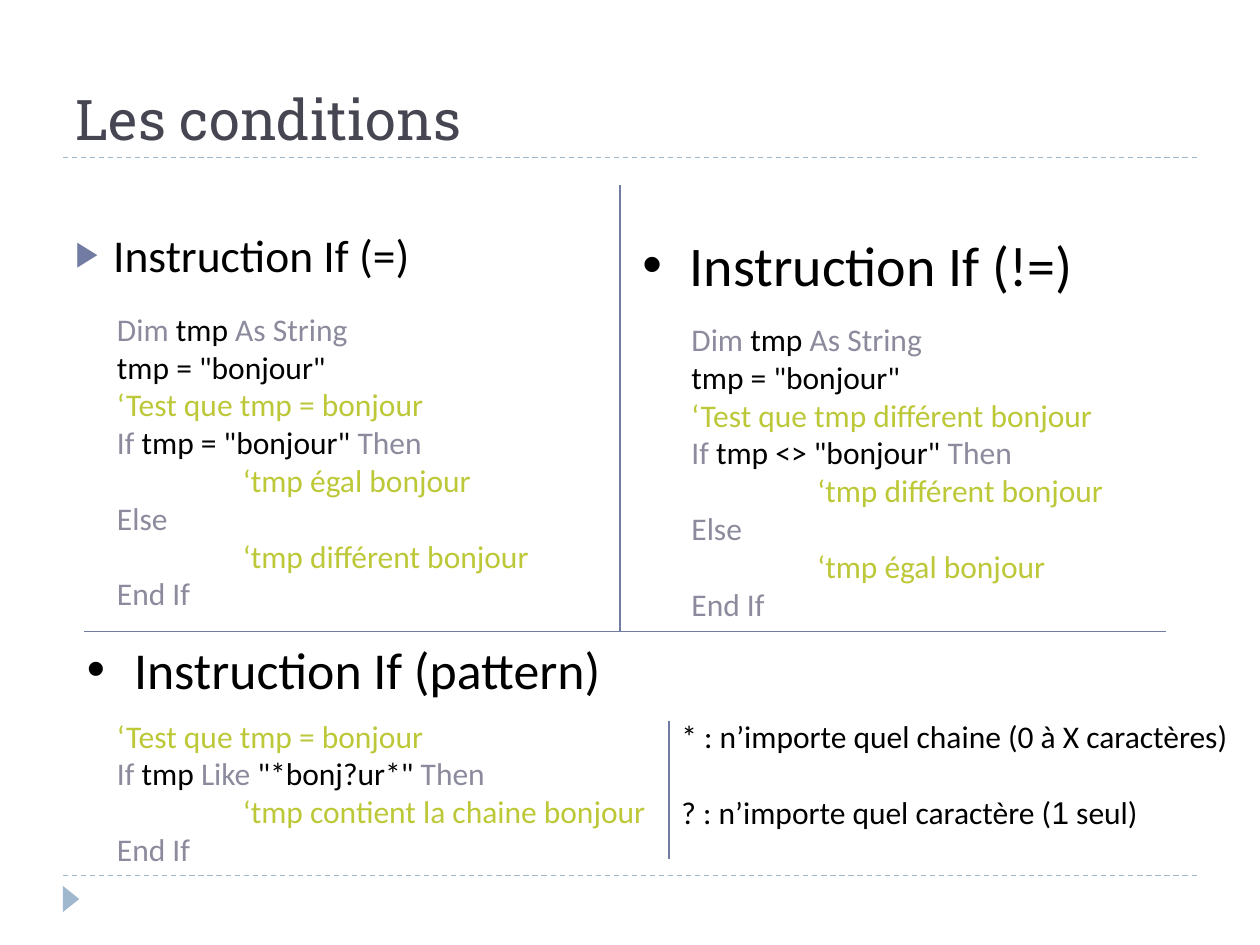
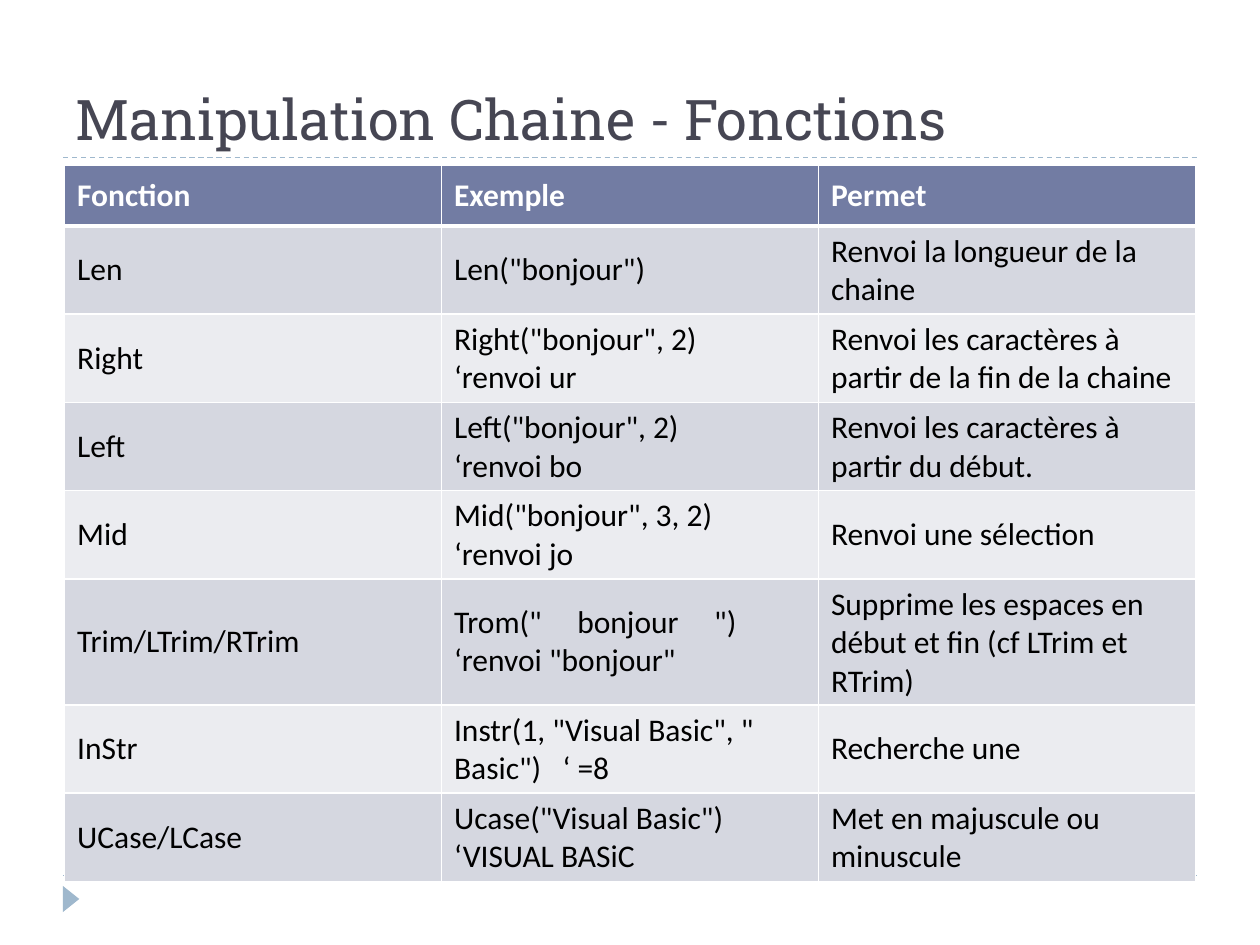
from dataclasses import dataclass
from typing import NamedTuple

from lxml import etree
from pptx import Presentation
from pptx.dml.color import RGBColor
from pptx.enum import dml, shapes, text
from pptx.oxml import ns
from pptx.util import Pt

INK = RGBColor(0x00, 0x00, 0x00)
WHITE = RGBColor(0xFF, 0xFF, 0xFF)
TITLE_GREY = RGBColor(0x46, 0x46, 0x53)
KEYWORD_GREY = RGBColor(0x8B, 0x8B, 0x9D)
COMMENT_GREEN = RGBColor(0xBC, 0xC8, 0x38)
ACCENT = RGBColor(0x72, 0x7C, 0xA3)
PALE_BLUE = RGBColor(0x9F, 0xB8, 0xCD)
BANDS = (RGBColor(0xD5, 0xD7, 0xE0), RGBColor(0xEB, 0xEC, 0xF0))

TITLE_FONT = "Roboto Slab"
BODY_FONT = "Calibri"
BULLET_FONT = "Arial"
BODY_SIZE = 18
MARGIN, CONTENT_WIDTH = 36, 648
TITLE_RULE_Y, FOOTER_RULE_Y = 90, 500.4
DIVIDER_X, DIVIDER_Y = 354.24, 360.72


class Box(NamedTuple):
    left: float
    top: float
    width: float
    height: float


class Run(NamedTuple):
    text: str
    color: RGBColor = INK
    font: str = BODY_FONT


@dataclass
class Line:
    runs: list[Run]
    indent: float = 0
    space_before: float = 0


@dataclass
class Heading:
    box: Box
    label: str
    size: float
    bullet: str = "•"
    bullet_color: RGBColor = INK
    bullet_percent: int = 100
    hang: float = 27


@dataclass
class Rule:
    x1: float
    y1: float
    x2: float
    y2: float
    color: RGBColor = ACCENT
    dashed: bool = False


def keyword(words: str) -> Run:
    return Run(words, KEYWORD_GREY)


def comment(words: str, indent: float = 0) -> Line:
    return Line([Run(words, COMMENT_GREEN)], indent)


def if_else(test: str, operator: str, when_true: str, when_false: str) -> list[Line]:
    """Code sample that compares tmp with "bonjour"."""
    return [
        Line([keyword("Dim "), Run("tmp "), keyword("As String")]),
        Line([Run('tmp = "bonjour"')]),
        comment(f"‘Test que tmp {test} bonjour"),
        Line([keyword("If "), Run(f'tmp {operator} "bonjour" '), keyword("Then")]),
        comment(f"‘tmp {when_true} bonjour", 72),
        Line([keyword("Else")]),
        comment(f"‘tmp {when_false} bonjour", 72),
        Line([keyword("End If")]),
    ]


HEADINGS = [
    Heading(Box(36, 126, 296, 47.5), "Instruction If (=)", 26, "▶", ACCENT, 76, 21.6),
    Heading(Box(360, 128, 326, 47.5), "Instruction If (!=)", 32),
    Heading(Box(42.5, 360.72, 323, 47.5), "Instruction If (pattern)", 29.6),
]

PATTERN_CODE = [
    comment("‘Test que tmp = bonjour"),
    Line([keyword("If "), Run("tmp "), keyword("Like "), Run('"*bonj?ur*" '), keyword("Then")]),
    comment("‘tmp contient la chaine bonjour", 72),
    Line([keyword("End If")]),
]

WILDCARDS = [
    Line([Run("* : n’importe quel chaine (0 à X caractères)")]),
    Line([Run("? : n’importe quel caractère ("), Run("1", font="Arial"), Run(" seul)")],
         space_before=22),
]

CODE_BLOCKS = [
    (Box(59.76, 173.5, 294.5, 181.5), if_else("=", "=", "égal", "différent")),
    (Box(388, 179.3, 294.5, 181.5), if_else("différent", "<>", "différent", "égal")),
    (Box(59.76, 406, 317.5, 94.5), PATTERN_CODE),
    (Box(382.3, 406, 337.7, 72.7), WILDCARDS),
]

DIVIDERS = [
    Rule(DIVIDER_X, 105.84, DIVIDER_X, DIVIDER_Y),
    Rule(48.24, DIVIDER_Y, 666, DIVIDER_Y),
    Rule(382.3, 411.84, 382.3, 491),
]

FUNCTIONS = [
    ("Fonction", "Exemple", "Permet"),
    ("Len", 'Len("bonjour")', "Renvoi la longueur de la chaine"),
    ("Right", 'Right("bonjour", 2)\n‘renvoi ur',
     "Renvoi les caractères à partir de la fin de la chaine"),
    ("Left", 'Left("bonjour", 2)\n‘renvoi bo', "Renvoi les caractères à partir du début."),
    ("Mid", 'Mid("bonjour", 3, 2)\n‘renvoi jo', "Renvoi une sélection"),
    ("Trim/LTrim/RTrim", 'Trom("     bonjour     ")\n‘renvoi "bonjour"',
     "Supprime les espaces en début et fin (cf LTrim et RTrim)"),
    ("InStr", 'Instr(1, "Visual Basic", " Basic")   ‘ =8', "Recherche une"),
    ("UCase/LCase", 'Ucase("Visual Basic") ‘VISUAL BASiC', "Met en majuscule ou minuscule"),
]
ROW_HEIGHTS = [34.5, 43.9, 43.9, 43.9, 43.9, 62.6, 43.9, 34.5]


def add_run(paragraph, run: Run, size: float, bold: bool = False) -> None:
    piece = paragraph.add_run()
    piece.text = run.text
    piece.font.name = run.font
    piece.font.size = Pt(size)
    piece.font.bold = bold
    piece.font.color.rgb = run.color


def add_frame(slide, box: Box):
    frame = slide.shapes.add_textbox(*map(Pt, box)).text_frame
    frame.word_wrap = True
    return frame


def next_paragraph(frame, index: int):
    return frame.add_paragraph() if index else frame.paragraphs[0]


def add_lines(slide, box: Box, lines: list[Line]) -> None:
    frame = add_frame(slide, box)
    for index, line in enumerate(lines):
        paragraph = next_paragraph(frame, index)
        paragraph.space_before = Pt(line.space_before)
        if line.indent:
            paragraph._p.get_or_add_pPr().set("marL", str(Pt(line.indent)))
        for run in line.runs:
            add_run(paragraph, run, BODY_SIZE)


def add_heading(slide, heading: Heading) -> None:
    paragraph = add_frame(slide, heading.box).paragraphs[0]
    paragraph.space_before = Pt(6)
    properties = paragraph._p.get_or_add_pPr()
    properties.set("marL", str(Pt(heading.hang)))
    properties.set("indent", str(-Pt(heading.hang)))
    color = etree.SubElement(properties, ns.qn("a:buClr"))
    etree.SubElement(color, ns.qn("a:srgbClr"), val=str(heading.bullet_color))
    etree.SubElement(properties, ns.qn("a:buSzPct"), val=str(heading.bullet_percent * 1000))
    etree.SubElement(properties, ns.qn("a:buFont"), typeface=BULLET_FONT)
    etree.SubElement(properties, ns.qn("a:buChar"), char=heading.bullet)
    add_run(paragraph, Run(heading.label), heading.size)


def add_rule(slide, rule: Rule) -> None:
    connector = slide.shapes.add_connector(
        shapes.MSO_CONNECTOR.STRAIGHT, Pt(rule.x1), Pt(rule.y1), Pt(rule.x2), Pt(rule.y2))
    connector.line.color.rgb = rule.color
    connector.line.width = Pt(0.75)
    if rule.dashed:
        connector.line.dash_style = dml.MSO_LINE.DASH
    etree.SubElement(connector._element.spPr, ns.qn("a:effectLst"))


def add_titled_slide(deck, title: str):
    """Blank slide with the shared rules, page marker and title."""
    slide = deck.slides.add_slide(deck.slide_layouts[6])
    for y in (FOOTER_RULE_Y, TITLE_RULE_Y):
        add_rule(slide, Rule(MARGIN, y, MARGIN + CONTENT_WIDTH, y, PALE_BLUE, True))
    marker = slide.shapes.add_shape(
        shapes.MSO_SHAPE.ISOSCELES_TRIANGLE, Pt(33.1), Pt(509), Pt(15), Pt(9.4))
    marker.rotation = 90
    marker.shadow.inherit = False
    marker.fill.solid()
    marker.fill.fore_color.rgb = PALE_BLUE
    marker.line.fill.background()
    frame = add_frame(slide, Box(MARGIN, 12.24, CONTENT_WIDTH, 77.76))
    frame.vertical_anchor = text.MSO_ANCHOR.BOTTOM
    add_run(frame.paragraphs[0], Run(title, TITLE_GREY, TITLE_FONT), 32)
    return slide


def set_borders(cell, top: float, bottom: float) -> None:
    properties = cell._tc.get_or_add_tcPr()
    for side, width in (("L", 1), ("R", 1), ("T", top), ("B", bottom)):
        border = etree.SubElement(properties, ns.qn(f"a:ln{side}"), w=str(Pt(width)))
        fill = etree.SubElement(border, ns.qn("a:solidFill"))
        etree.SubElement(fill, ns.qn("a:srgbClr"), val=str(WHITE))


def fill_cell(cell, content: str, row: int) -> None:
    is_header = row == 0
    set_borders(cell, top=3 if row == 1 else 1, bottom=3 if is_header else 1)
    cell.fill.solid()
    cell.fill.fore_color.rgb = ACCENT if is_header else BANDS[(row - 1) % 2]
    cell.vertical_anchor = text.MSO_ANCHOR.MIDDLE
    for index, words in enumerate(content.split("\n")):
        paragraph = next_paragraph(cell.text_frame, index)
        add_run(paragraph, Run(words, WHITE if is_header else INK), BODY_SIZE, is_header)


def add_function_table(slide) -> None:
    box = Box(36.9, 94.6, 646.2, sum(ROW_HEIGHTS))
    columns = len(FUNCTIONS[0])
    table = slide.shapes.add_table(len(FUNCTIONS), columns, *map(Pt, box)).table
    table.horz_banding = False
    for column in table.columns:
        column.width = Pt(box.width / columns)
    for row, (contents, height) in enumerate(zip(FUNCTIONS, ROW_HEIGHTS)):
        table.rows[row].height = Pt(height)
        for column, content in enumerate(contents):
            fill_cell(table.cell(row, column), content, row)


def main() -> None:
    deck = Presentation()
    deck.slide_width, deck.slide_height = Pt(720), Pt(540)

    conditions = add_titled_slide(deck, "Les conditions")
    for heading in HEADINGS:
        add_heading(conditions, heading)
    for box, lines in CODE_BLOCKS:
        add_lines(conditions, box, lines)
    for divider in DIVIDERS:
        add_rule(conditions, divider)

    add_function_table(add_titled_slide(deck, "Manipulation Chaine - Fonctions"))
    deck.save("out.pptx")


if __name__ == "__main__":
    main()
